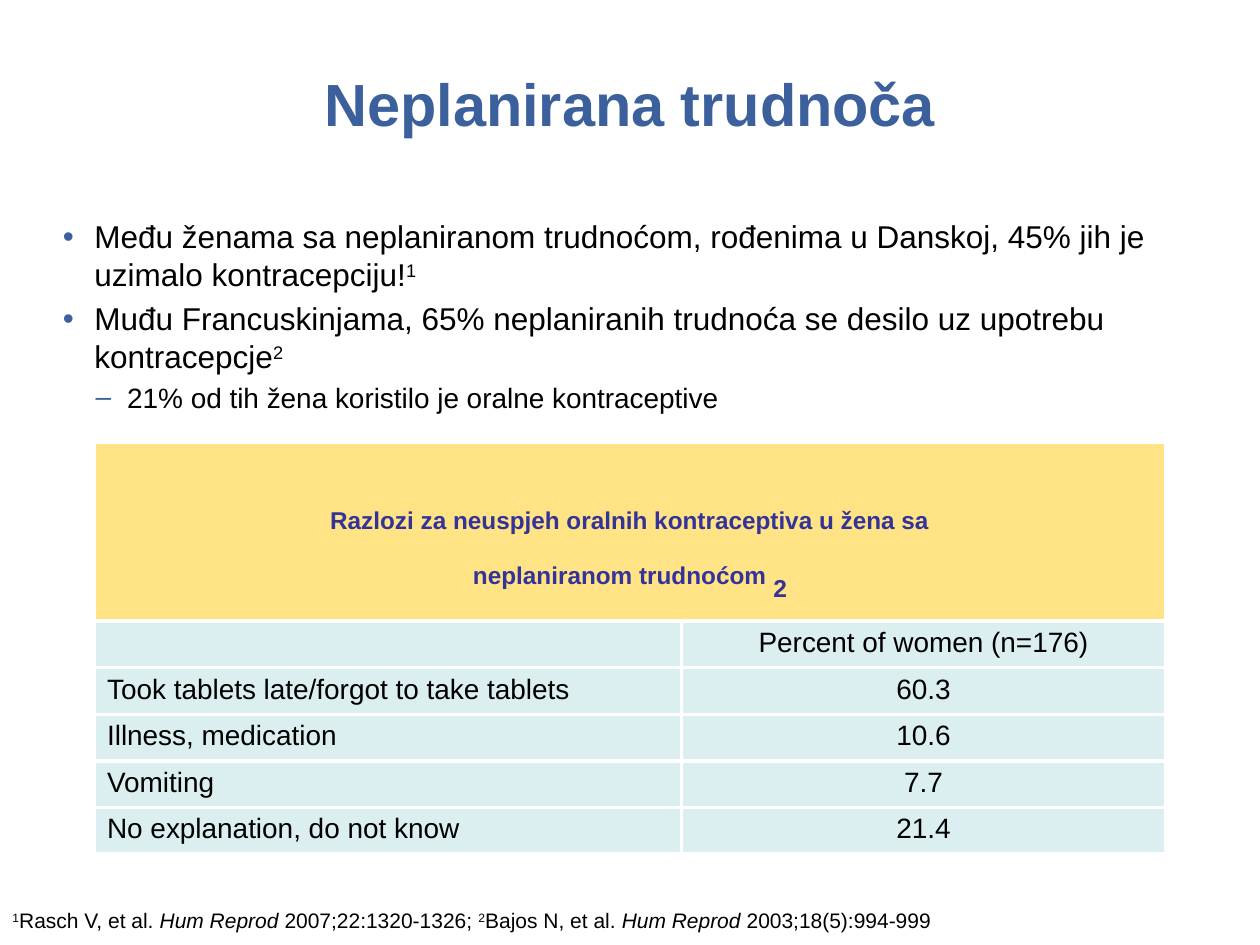
"""Build a slide on unplanned pregnancy with bullets, a table and references."""
from typing import NamedTuple

from lxml import etree
from pptx import Presentation, util as u
from pptx.dml.color import RGBColor
from pptx.enum import text as t
from pptx.oxml import ns

WIDE, HIGH = 10, 7.5
INK = {"blue": "3B609B", "black": "000000", "navy": "333399",
       "gold": "FFE384", "aqua": "BBE0E3", "white": "FFFFFF"}
MID = t.PP_ALIGN.CENTER


class Run(NamedTuple):
    words: str
    size: float = 16
    ink: str = "black"
    bold: bool = False
    slant: bool = False
    base: int = 0


class Point(NamedTuple):
    runs: list
    mark: str
    level: int
    left: float
    gap: float


class Row(NamedTuple):
    label: str
    value: str


POINTS = [
    Point([Run("Među ženama sa neplaniranom trudnoćom, rođenima u Danskoj, "
               "45% jih je uzimalo kontracepciju!", 18),
           Run("1", 18, base=30)], "•", 0, 0.25, 0),
    Point([Run("Muđu Francuskinjama, 65% neplaniranih trudnoća se desilo uz "
               "upotrebu kontracepcje", 18),
           Run("2", 18, base=30)], "•", 0, 0.25, 3.6),
    Point([Run("21% od tih žena koristilo je oralne kontraceptive")],
          "–", 1, 0.51, 3.2),
]
HEAD = [
    [Run("Razlozi za neuspjeh oralnih kontraceptiva u žena sa", 24, "navy", True, base=30)],
    [Run("neplaniranom trudnoćom ", 24, "navy", True, base=30),
     Run("2", 14, "navy", True)],
]
ROWS = [
    Row("", "Percent of women (n=176)"),
    Row("Took tablets late/forgot to take tablets", "60.3"),
    Row("Illness, medication", "10.6"),
    Row("Vomiting", "7.7"),
    Row("No explanation, do not know", "21.4"),
]
REFS = [
    Run("1", 12, base=30), Run("Rasch V, et al. ", 12),
    Run("Hum Reprod", 12, slant=True), Run(" 2007;22:1320-1326; ", 12),
    Run("2", 12, base=30), Run("Bajos N, et al. ", 12),
    Run("Hum Reprod", 12, slant=True), Run(" 2003;18(5):994-999", 12),
]


def node(up, tag: str, **keys: str):
    """Append a drawing element to its parent."""
    return etree.SubElement(up, ns.qn(tag), keys)


def write(para, runs: list, align=None) -> None:
    """Add runs to a paragraph."""
    if align is not None:
        para.alignment = align
    for item in runs:
        run = para.add_run()
        run.text = item.words
        font = run.font
        font.name, font.size = "Arial", u.Pt(item.size)
        font.bold, font.italic = item.bold, item.slant
        font.color.rgb = RGBColor.from_string(INK[item.ink])
        if item.base:
            run._r.get_or_add_rPr().set("baseline", str(item.base * 1000))


def frame(slide, left: float, top: float, wide: float, high: float, inset=True):
    """Add a wrapping text box placed by shares of the slide."""
    box = slide.shapes.add_textbox(
        u.Inches(left * WIDE), u.Inches(top * HIGH),
        u.Inches(wide * WIDE), u.Inches(high * HIGH)).text_frame
    box.word_wrap = True
    if not inset:
        box.margin_left = box.margin_right = box.margin_top = box.margin_bottom = 0
    return box


def bullet(para, point: Point) -> None:
    """Write one bulleted paragraph."""
    para.level = point.level
    props = para._p.get_or_add_pPr()
    props.set("marL", str(u.Inches(point.left)))
    props.set("indent", str(u.Inches(-0.25)))
    node(node(props, "a:buClr"), "a:srgbClr", val=INK["blue"])
    node(props, "a:buFont", typeface="Arial")
    node(props, "a:buChar", char=point.mark)
    para.space_before = u.Pt(point.gap)
    write(para, point.runs)


def paint(cell, ink: str, alpha: int = 100) -> None:
    """Give a cell white borders and a fill."""
    props = cell._tc.get_or_add_tcPr()
    for side in ("L", "R", "T", "B"):
        line = node(props, f"a:ln{side}", w=str(u.Pt(2.25)))
        node(node(line, "a:solidFill"), "a:srgbClr", val=INK["white"])
    cell.fill.solid()
    cell.fill.fore_color.rgb = RGBColor.from_string(INK[ink])
    if alpha < 100:
        tone = props.find(ns.qn("a:solidFill")).find(ns.qn("a:srgbClr"))
        node(tone, "a:alpha", val=str(alpha * 1000))


def chart(slide) -> None:
    """Draw the table of reasons."""
    wide, high = (4.66, 3.84), [1.42] + [0.37] * len(ROWS)
    grid = slide.shapes.add_table(
        len(high), len(wide), u.Inches(0.075 * WIDE), u.Inches(0.468 * HIGH),
        u.Inches(sum(wide)), u.Inches(sum(high))).table
    for col, size in zip(grid.columns, wide):
        col.width = u.Inches(size)
    for row, size in zip(grid.rows, high):
        row.height = u.Inches(size)
    top = grid.cell(0, 0)
    top.merge(grid.cell(0, 1))
    for cell in grid.rows[0].cells:
        paint(cell, "gold")
    top.margin_top = u.Inches(0.49)
    for step, runs in enumerate(HEAD):
        para = top.text_frame.add_paragraph() if step else top.text_frame.paragraphs[0]
        para.space_before = u.Pt(4.8 * step)
        write(para, runs, MID)
    for line, row in enumerate(ROWS, 1):
        for col, (words, align) in enumerate(zip(row, (t.PP_ALIGN.LEFT, MID))):
            cell = grid.cell(line, col)
            paint(cell, "aqua", 50)
            para = cell.text_frame.paragraphs[0]
            if words:
                write(para, [Run(words)], align)
            else:
                para.font.size = u.Pt(16)


def main() -> None:
    """Build and save the slide."""
    deck = Presentation()
    deck.slide_width, deck.slide_height = u.Inches(WIDE), u.Inches(HIGH)
    slide = deck.slides.add_slide(deck.slide_layouts[6])
    title = frame(slide, 0.05, 0.08, 0.9, 0.13, False).paragraphs[0]
    title.line_spacing = u.Pt(36)
    write(title, [Run("Neplanirana trudnoča", 34, "blue", True)], MID)
    body = frame(slide, 0.05, 0.23, 0.9, 0.3, False)
    for step, point in enumerate(POINTS):
        bullet(body.add_paragraph() if step else body.paragraphs[0], point)
    chart(slide)
    refs = frame(slide, 0, 0.96, 0.858, 0.033).paragraphs[0]
    refs.line_spacing = 0.76
    write(refs, REFS)
    deck.save("out.pptx")


if __name__ == "__main__":
    main()
